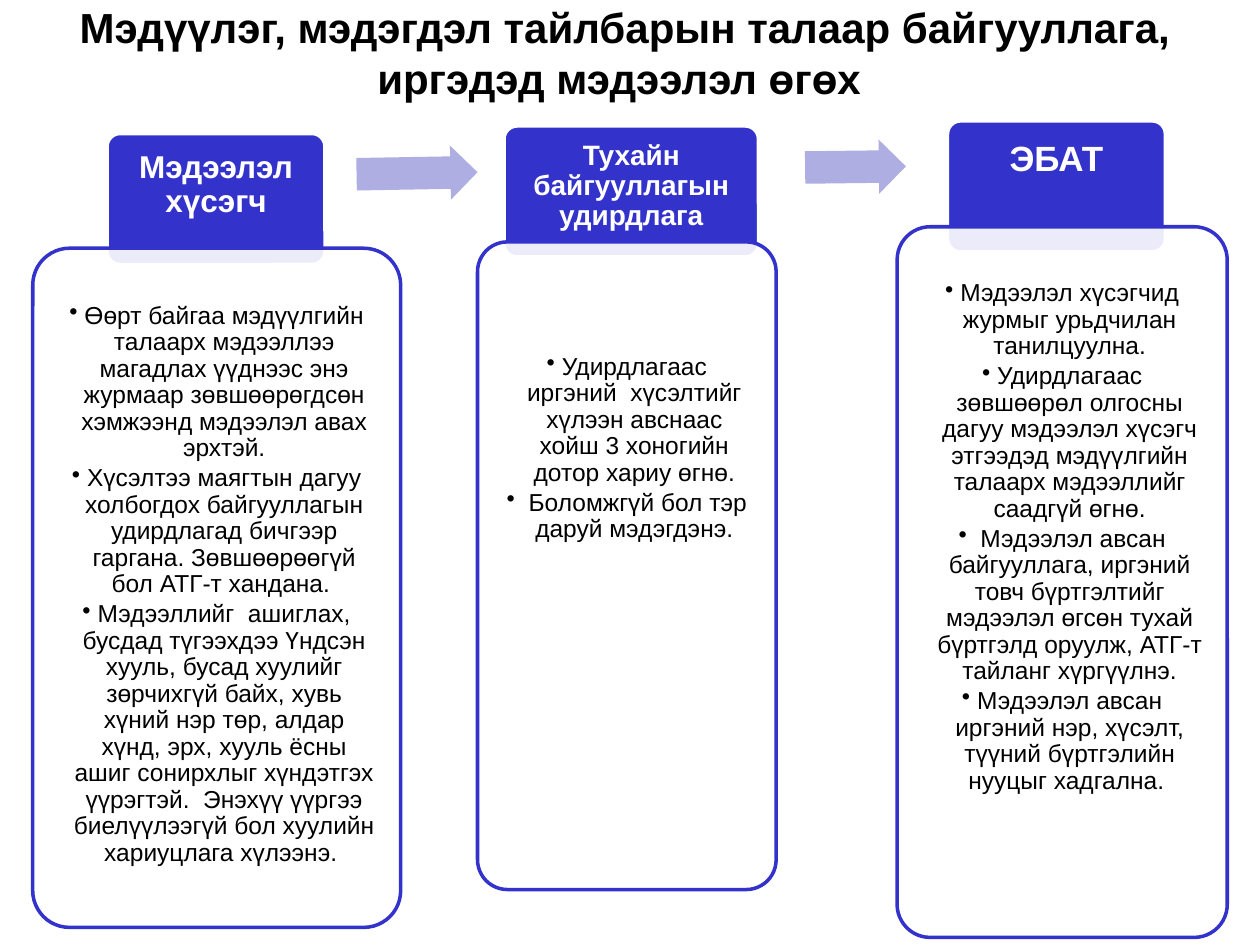
from lxml import etree
from pptx import Presentation
from pptx.dml.color import RGBColor
from pptx.enum.shapes import MSO_SHAPE as Shape
from pptx.enum.text import MSO_ANCHOR as Anchor, PP_ALIGN as Align
from pptx.oxml.ns import qn
from pptx.util import Inches, Pt

BLUE = RGBColor(0x33, 0x33, 0xCC)
LILAC = RGBColor(0xAE, 0xAE, 0xE2)
WHITE = RGBColor(0xFF, 0xFF, 0xFF)
BLACK = RGBColor(0, 0, 0)

TITLE = "Мэдүүлэг, мэдэгдэл тайлбарын талаар байгууллага, иргэдэд мэдээлэл өгөх "

# Each stage: heading, heading size, heading inset, heading box, panel box,
# space above the first bullet, bullets
STAGES = [
    ("Мэдээлэл хүсэгч", 18, 0.11, (0.85, 1.06, 1.73, 1.04), (0.26, 1.97, 2.92, 5.39), 0.24, [
        "Өөрт байгаа мэдүүлгийн талаарх мэдээллээ магадлах үүднээс энэ журмаар "
        "зөвшөөрөгдсөн хэмжээнд мэдээлэл авах эрхтэй.",
        "Хүсэлтээ маягтын дагуу холбогдох байгууллагын удирдлагад бичгээр гаргана. "
        "Зөвшөөрөөгүй бол АТГ-т хандана. ",
        "Мэдээллийг  ашиглах, бусдад түгээхдээ Үндсэн хууль, бусад хуулийг зөрчихгүй "
        "байх, хувь хүний нэр төр, алдар хүнд, эрх, хууль ёсны ашиг сонирхлыг "
        "хүндэтгэх үүрэгтэй.  Энэхүү үүргээ биелүүлээгүй бол хуулийн хариуцлага "
        "хүлээнэ. ",
    ]),
    ("Тухайн байгууллагын удирдлага", 16, 0.09, (4, 1, 2.02, 1.04), (3.79, 1.92, 2.37, 5.14), 0.71, [
        "Удирдлагаас иргэний  хүсэлтийг хүлээн авснаас хойш 3 хоногийн дотор хариу өгнө.",
        " Боломжгүй бол тэр даруй мэдэгдэнэ.",
    ]),
    ("ЭБАТ", 20, 0.13, (7.52, 0.96, 1.73, 1.04), (7.12, 1.8, 2.62, 5.64), 0.24, [
        "Мэдээлэл хүсэгчид журмыг урьдчилан танилцуулна.",
        "Удирдлагаас зөвшөөрөл олгосны дагуу мэдээлэл хүсэгч этгээдэд мэдүүлгийн "
        "талаарх мэдээллийг саадгүй өгнө.",
        " Мэдээлэл авсан байгууллага, иргэний товч бүртгэлтийг мэдээлэл өгсөн тухай "
        "бүртгэлд оруулж, АТГ-т тайланг хүргүүлнэ.",
        "Мэдээлэл авсан иргэний нэр, хүсэлт, түүний бүртгэлийн нууцыг хадгална. ",
    ]),
]

# Each arrow: box, rotation in degrees
ARROWS = [((2.83, 1.16, 0.96, 0.43), 359), ((6.39, 1.11, 0.8, 0.43), 359.3)]


class SlideBuilder:
    font_name = "Arial"
    panel_inset = 0.11
    bullet_indent = 0.12

    def __init__(self, slide):
        self.slide = slide

    def style(self, paragraph, size, color, bold=False):
        paragraph.alignment = Align.CENTER
        font = paragraph.font
        font.name, font.size, font.bold = self.font_name, Pt(size), bold
        font.color.rgb = color

    def title(self, text, box):
        title = self.slide.shapes.title
        title.left, title.top, title.width, title.height = map(Inches, box)
        frame = title.text_frame
        frame.text = text
        frame.word_wrap = True
        frame.vertical_anchor = Anchor.MIDDLE
        self.style(frame.paragraphs[0], 24, BLACK, bold=True)

    def shape(self, kind, box, fill, line=None):
        shape = self.slide.shapes.add_shape(kind, *map(Inches, box))
        shape.shadow.inherit = False
        shape.fill.solid()
        shape.fill.fore_color.rgb = fill
        if line is None:
            shape.line.fill.background()
        else:
            shape.line.color.rgb = line
            shape.line.width = Pt(2)
        return shape

    def card(self, box, fill, line, inset, space_above=0):
        """Rounded box with top-anchored text; returns the shape."""
        card = self.shape(Shape.ROUNDED_RECTANGLE, box, fill, line)
        card.adjustments[0] = 0.1
        frame = card.text_frame
        frame.word_wrap = True
        frame.vertical_anchor = Anchor.TOP
        frame.margin_left = frame.margin_right = frame.margin_bottom = Inches(inset)
        frame.margin_top = Inches(inset + space_above)
        return card

    def heading(self, text, size, inset, box):
        frame = self.card(box, BLUE, WHITE, inset).text_frame
        frame.text = text
        paragraph = frame.paragraphs[0]
        paragraph.line_spacing = 0.9
        self.style(paragraph, size, WHITE, bold=True)

    def panel(self, bullets, box, space_above):
        panel = self.card(box, WHITE, BLUE, self.panel_inset, space_above)
        color = panel.fill._xPr.find(qn("a:solidFill"))[0]
        etree.SubElement(color, qn("a:alpha"), val="90000")
        frame = panel.text_frame
        frame.text = "\n".join(bullets)
        for paragraph in frame.paragraphs:
            paragraph.line_spacing = 0.9
            paragraph.space_after = Pt(2)
            self.bullet(paragraph)
            self.style(paragraph, 14, BLACK)

    def bullet(self, paragraph):
        properties = paragraph._p.get_or_add_pPr()
        indent = Inches(self.bullet_indent)
        properties.set("marL", str(indent))
        properties.set("indent", str(-indent))
        etree.SubElement(properties, qn("a:buChar"), char="•")

    def arrow(self, box, rotation):
        arrow = self.shape(Shape.RIGHT_ARROW, box, LILAC)
        arrow.adjustments[0] = 0.6
        arrow.adjustments[1] = 0.5
        arrow.rotation = rotation


def main():
    deck = Presentation()
    deck.slide_width, deck.slide_height = Inches(10), Inches(7.5)
    title_only = deck.slide_layouts[5]
    builder = SlideBuilder(deck.slides.add_slide(title_only))
    builder.title(TITLE, (0.17, 0, 9.58, 0.83))
    for heading, size, inset, heading_box, panel_box, space_above, bullets in STAGES:
        builder.heading(heading, size, inset, heading_box)
        builder.panel(bullets, panel_box, space_above)
    for box, rotation in ARROWS:
        builder.arrow(box, rotation)
    deck.save("out.pptx")


if __name__ == "__main__":
    main()
